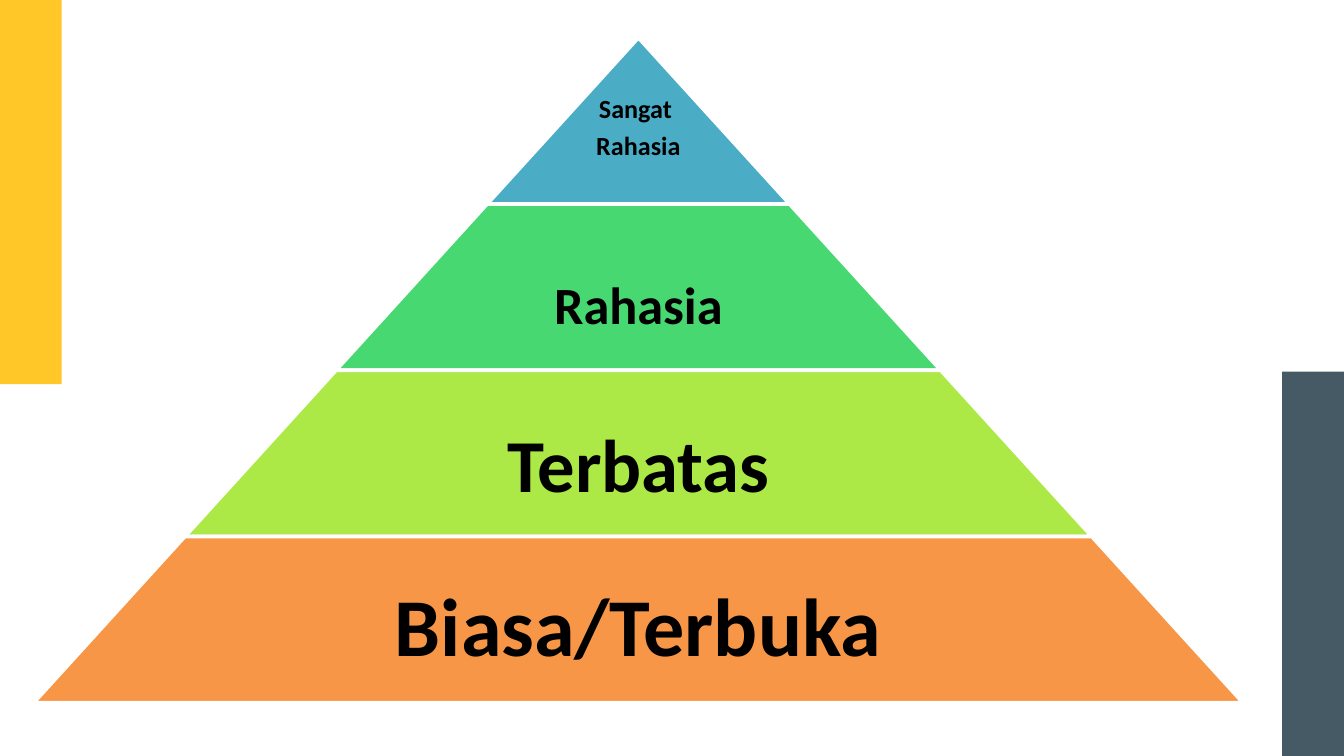
from pptx import Presentation
from pptx.dml.color import RGBColor
from pptx.enum.shapes import MSO_SHAPE as Shape
from pptx.enum.text import MSO_ANCHOR as Anchor, PP_ALIGN as Align
from pptx.util import Inches, Pt

SLIDE_WIDTH = 10
SLIDE_HEIGHT = SLIDE_WIDTH * 9 / 16


def color(hex_code):
    return RGBColor.from_string(hex_code)


def add_filled_shape(kind, left, top, width, height, fill):
    shape = slide.shapes.add_shape(
        kind, Inches(left), Inches(top), Inches(width), Inches(height))
    shape.shadow.inherit = False
    shape.fill.solid()
    shape.fill.fore_color.rgb = color(fill)
    shape.line.fill.background()
    return shape


presentation = Presentation()
presentation.slide_width = Inches(SLIDE_WIDTH)
presentation.slide_height = Inches(SLIDE_HEIGHT)
slide = presentation.slides.add_slide(presentation.slide_layouts[6])

# Side bars
BAR_WIDTH, BAR_HEIGHT = 0.46, 2.86
add_filled_shape(Shape.RECTANGLE, SLIDE_WIDTH - BAR_WIDTH, SLIDE_HEIGHT - BAR_HEIGHT,
                 BAR_WIDTH, BAR_HEIGHT, "455A64")
add_filled_shape(Shape.RECTANGLE, 0, 0, BAR_WIDTH, BAR_HEIGHT, "FFC727")

# Lines of text, fill, font size, text top, width and height, inset, anchor
levels = [
    (["Sangat ", "Rahasia"], "4BACC6", 14, 0.69, 0.75, 0.82, 0.02, Anchor.TOP),
    (["Rahasia"], "47D872", 28, 1.83, 1.43, 0.92, 0.04, Anchor.MIDDLE),
    (["Terbatas"], "ACE946", 40, 2.97, 2.89, 1.03, 0.06, Anchor.MIDDLE),
    (["Biasa/Terbuka"], "F79646", 44, 4.15, 4.35, 1.08, 0.06, Anchor.MIDDLE),
]

# Pyramid, from the tip down: each level is one tip width wider than the last
CENTER, TOP = 4.75, 0.28
TIP_WIDTH = 9 / len(levels)
LEVEL_HEIGHT = 4.95 / len(levels)

for index, (lines, fill, size, text_top, text_width, text_height,
            inset, anchor) in enumerate(levels):
    width = TIP_WIDTH * (index + 1)
    level = add_filled_shape(Shape.TRAPEZOID, CENTER - width / 2,
                             TOP + LEVEL_HEIGHT * index, width, LEVEL_HEIGHT, fill)
    level.adjustments[0] = TIP_WIDTH / 2 / LEVEL_HEIGHT
    level.line.color.rgb = color("FFFFFF")
    level.line.width = Pt(2)

    label = slide.shapes.add_textbox(
        Inches(CENTER - text_width / 2), Inches(text_top),
        Inches(text_width), Inches(text_height))
    frame = label.text_frame
    frame.word_wrap = True
    frame.vertical_anchor = anchor
    frame.margin_left = frame.margin_right = Inches(inset)
    frame.margin_top = frame.margin_bottom = Inches(inset)
    for number, line in enumerate(lines):
        paragraph = frame.add_paragraph() if number else frame.paragraphs[0]
        paragraph.alignment = Align.CENTER
        paragraph.line_spacing = 0.9
        if number:
            paragraph.space_before = Pt(size * 0.35)
        run = paragraph.add_run()
        run.text = line
        run.font.name = "Calibri"
        run.font.size = Pt(size)
        run.font.bold = True
        run.font.color.rgb = color("000000")

presentation.save("out.pptx")
